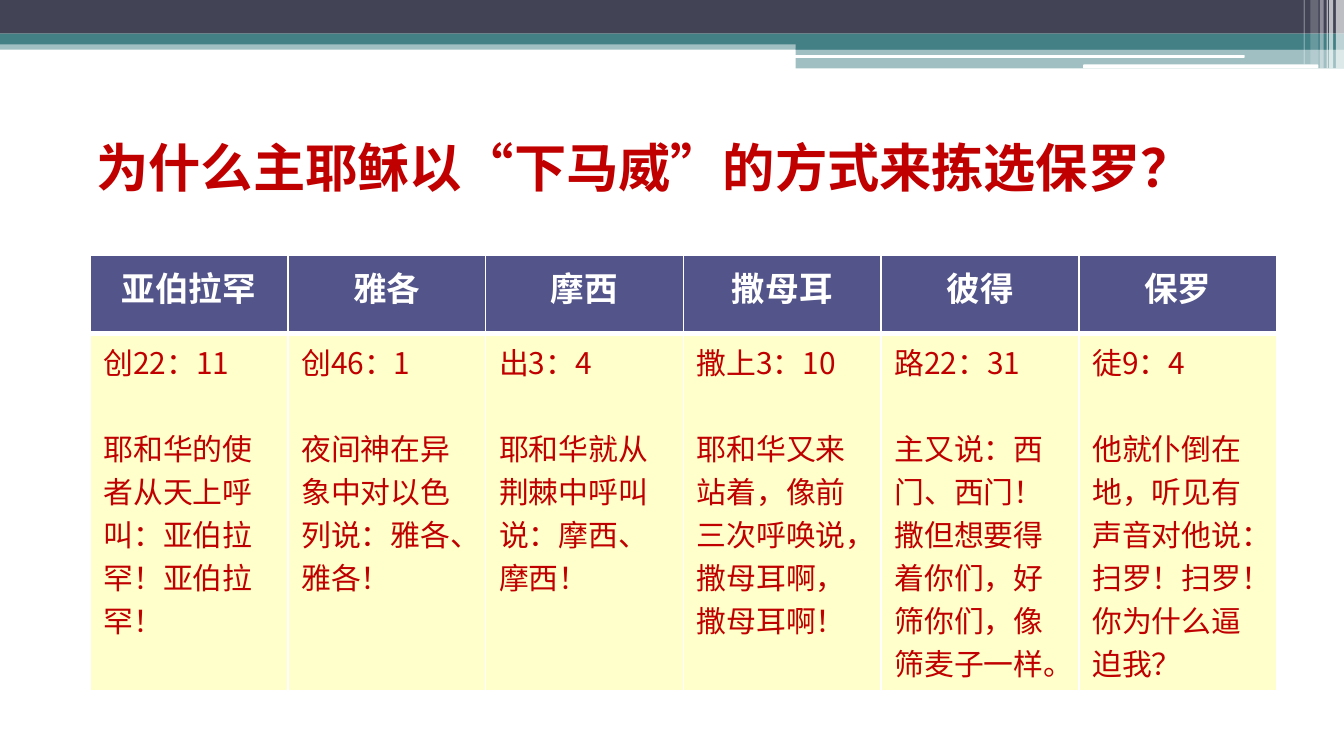
import dataclasses

import lxml.etree
import pptx
import pptx.dml.color
import pptx.enum.shapes
import pptx.enum.text
import pptx.oxml.ns
import pptx.util

Inches = pptx.util.Inches
Pt = pptx.util.Pt
qn = pptx.oxml.ns.qn
Kind = pptx.enum.shapes.MSO_SHAPE
Align = pptx.enum.text.PP_ALIGN


@dataclasses.dataclass(frozen=True)
class Theme:
    navy: str = "424456"
    teal: str = "438086"
    white: str = "FFFFFF"
    red: str = "C00000"
    head: str = "53548A"
    cream: str = "FFFFCC"
    serif: str = "Cambria"
    sans: str = "Noto Sans CJK SC"
    title: int = 28
    label: int = 18
    body: int = 16


THEME = Theme()

CALLS = [
    ("亚伯拉罕", "创22：11", "耶和华的使者从天上呼叫：亚伯拉罕！亚伯拉罕！"),
    ("雅各", "创46：1", "夜间神在异象中对以色列说：雅各、雅各！"),
    ("摩西", "出3：4", "耶和华就从荆棘中呼叫说：摩西、摩西！"),
    ("撒母耳", "撒上3：10", "耶和华又来站着，像前三次呼唤说，撒母耳啊，撒母耳啊！"),
    ("彼得", "路22：31", "主又说：西门、西门！撒但想要得着你们，好筛你们，像筛麦子一样。"),
    ("保罗", "徒9：4", "他就仆倒在地，听见有声音对他说：扫罗！扫罗！你为什么逼迫我？"),
]


def rgb(color):
    return pptx.dml.color.RGBColor.from_string(color)


def write(para, text, size, color, font=THEME.serif, bold=False, align=Align.LEFT, after=0):
    para.alignment = align
    para.space_after = Pt(after)
    run = para.add_run()
    run.text = text
    run.font.size = Pt(size)
    run.font.bold = bold
    run.font.name = font
    run.font.color.rgb = rgb(color)
    # East Asian glyphs take their own typeface
    east = lxml.etree.SubElement(run.font._element, qn("a:ea"))
    east.set("typeface", THEME.sans)


def bar(slide, x, y, w, h, color, alpha=100, kind=Kind.RECTANGLE):
    """Add a plain bar; alpha is its opacity in percent."""
    shape = slide.shapes.add_shape(kind, Inches(x), Inches(y), Inches(w), Inches(h))
    shape.shadow.inherit = False
    shape.line.fill.background()
    shape.fill.solid()
    shape.fill.fore_color.rgb = rgb(color)
    if alpha < 100:
        tint = shape._element.spPr.find(".//" + qn("a:srgbClr"))
        lxml.etree.SubElement(tint, qn("a:alpha")).set("val", str(alpha * 1000))


def banner(slide, x, y, w):
    """Draw the bands, the step on the right and the fading stripes."""
    step = x + 5.92
    wide = w - 5.92
    bar(slide, x, y + 0.3, w, 0.07, THEME.teal, 50)
    bar(slide, x, y, w, 0.25, THEME.navy)
    bar(slide, x, y + 0.25, w, 0.08, THEME.teal)
    bar(slide, step, y + 0.3, wide, 0.07, THEME.teal)
    bar(slide, step, y + 0.36, wide, 0.15, THEME.teal, 50)
    for left, top, width, height in [(5.91, 0.41, 3.35, 0.02), (8.06, 0.48, 1.75, 0.03)]:
        bar(slide, x + left, y + top, width, height, THEME.white, kind=Kind.ROUNDED_RECTANGLE)
    stripes = [
        (0.06, 0.06, 0.51, 65), (0.11, 0.03, 0.51, 65), (0.13, 0.01, 0.51, 60),
        (0.18, 0.03, 0.51, 40), (0.25, 0.06, 0.48, 20), (0.3, 0.01, 0.48, 30),
    ]
    for back, width, height, alpha in stripes:
        bar(slide, x + w - back, y, width, height, THEME.white, alpha)


def heading(slide, x, y, w, h):
    box = slide.shapes.add_textbox(Inches(x), Inches(y), Inches(w), Inches(h))
    box.text_frame.word_wrap = True
    write(box.text_frame.paragraphs[0], "为什么主耶稣以“下马威”的方式来拣选保罗？",
          THEME.title, THEME.red, bold=True)


def paint(cell, color, base=1):
    """Fill a cell and give it white borders; base is the bottom width."""
    cell.fill.solid()
    cell.fill.fore_color.rgb = rgb(color)
    props = cell._tc.get_or_add_tcPr()
    sides = [("L", 1), ("R", 1), ("T", 1), ("B", base)]
    for spot, (side, width) in enumerate(sides):
        line = lxml.etree.Element(qn("a:ln" + side), w=str(int(Pt(width))))
        fill = lxml.etree.SubElement(line, qn("a:solidFill"))
        lxml.etree.SubElement(fill, qn("a:srgbClr"), val=THEME.white)
        props.insert(spot, line)


def grid(slide, x, y, w, h, top=0.58):
    """Place the table of calls, one column for each person."""
    frame = slide.shapes.add_table(2, len(CALLS), Inches(x), Inches(y), Inches(w), Inches(h))
    table = frame.table
    table.horz_banding = False
    table.rows[0].height = Inches(top)
    table.rows[1].height = Inches(h - top)
    for col, (name, verse, quote) in enumerate(CALLS):
        table.columns[col].width = Inches(w / len(CALLS))
        head, body = table.cell(0, col), table.cell(1, col)
        paint(head, THEME.head, base=3)
        paint(body, THEME.cream)
        write(head.text_frame.paragraphs[0], name, THEME.label, THEME.white,
              bold=True, align=Align.CENTER)
        text = body.text_frame
        write(text.paragraphs[0], verse, THEME.body, THEME.red, font=THEME.sans, after=23)
        write(text.add_paragraph(), quote, THEME.body, THEME.red, font=THEME.sans)


def main():
    deck = pptx.Presentation()
    deck.slide_width = Inches(10)
    deck.slide_height = deck.slide_width * 9 // 16
    slide = deck.slides.add_slide(deck.slide_layouts[6])
    banner(slide, 0, 0, 10)
    heading(slide, 0.62, 0.96, 8.88, 0.66)
    grid(slide, 0.67, 1.9, 8.83, 3.24)
    deck.save("out.pptx")


if __name__ == "__main__":
    main()
